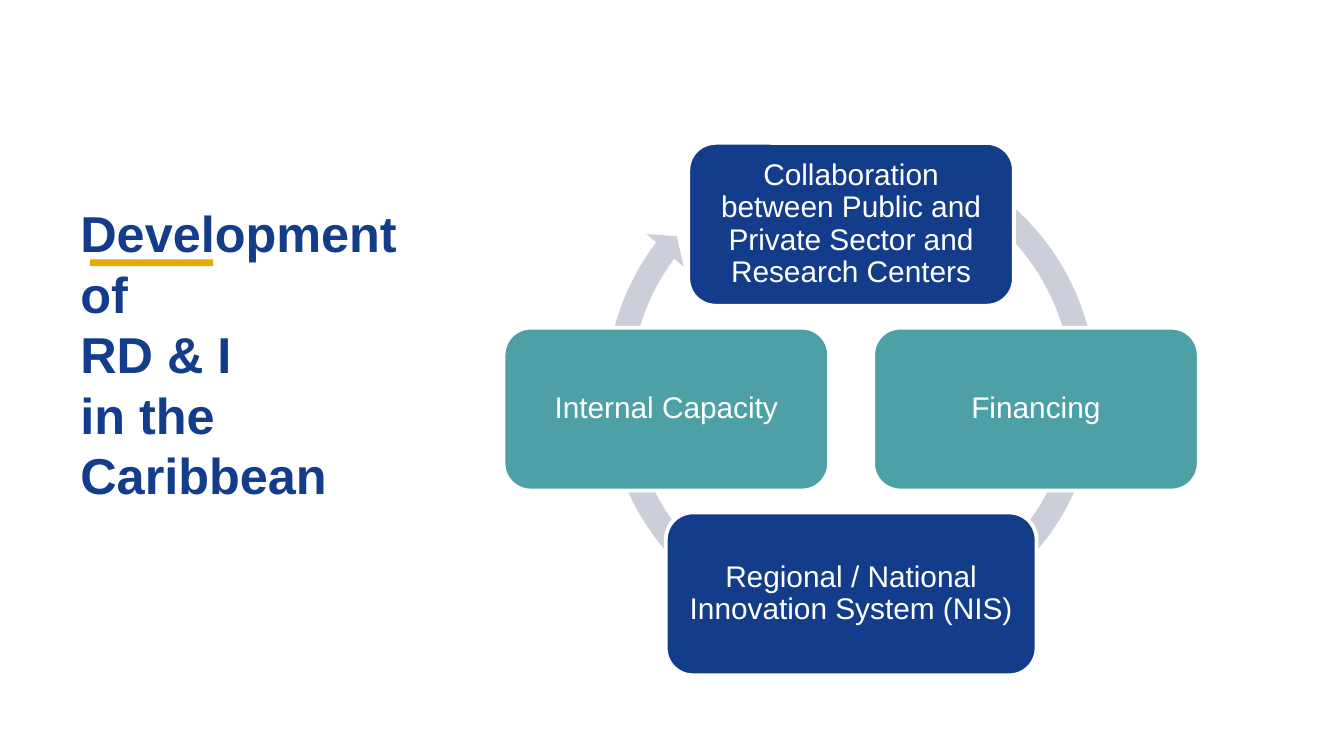
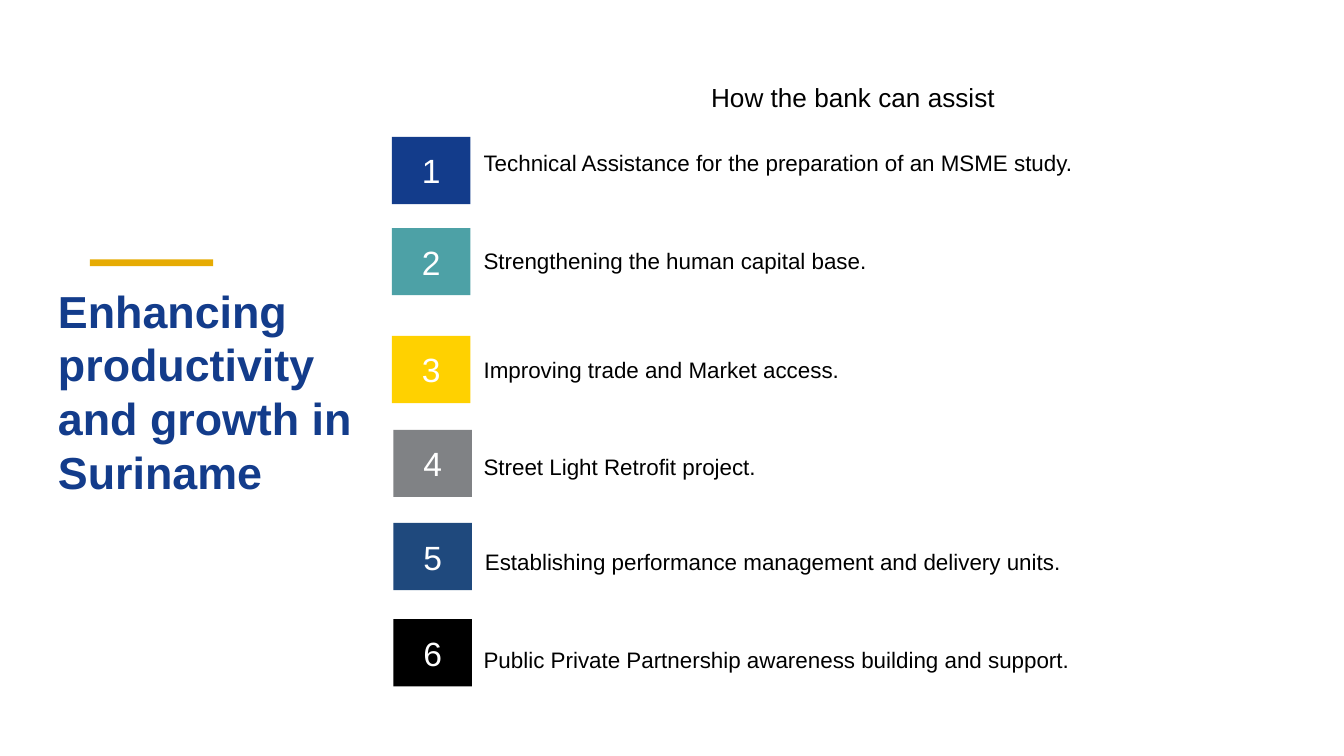
from dataclasses import dataclass

from pptx import Presentation
from pptx.dml.color import RGBColor
from pptx.enum.shapes import MSO_SHAPE
from pptx.enum.text import MSO_ANCHOR, PP_ALIGN
from pptx.util import Pt

RECTANGLE = MSO_SHAPE.RECTANGLE
ROUNDED = MSO_SHAPE.ROUNDED_RECTANGLE
CIRCULAR_ARROW = MSO_SHAPE.CIRCULAR_ARROW
TOP, MIDDLE = MSO_ANCHOR.TOP, MSO_ANCHOR.MIDDLE
LEFT, CENTER, JUSTIFY = PP_ALIGN.LEFT, PP_ALIGN.CENTER, PP_ALIGN.JUSTIFY


@dataclass(frozen=True)
class Theme:
    font: str = "Arial"
    navy: str = "133C8B"
    teal: str = "4DA1A6"
    gold: str = "E6AB03"
    yellow: str = "FFD100"
    gray: str = "808285"
    blue: str = "1F497D"
    black: str = "000000"
    white: str = "FFFFFF"
    ring: str = "CCCEDA"
    large_title: int = 27
    title: int = 24
    number: int = 18
    node: int = 16
    heading: int = 14
    label: int = 12


def write_text(frame, text, *, font, size, color, bold=False, align=LEFT,
               anchor=TOP, spacing=None, insets=(7.2, 3.6)):
    frame.word_wrap = True
    frame.vertical_anchor = anchor
    frame.margin_left = frame.margin_right = Pt(insets[0])
    frame.margin_top = frame.margin_bottom = Pt(insets[1])
    para = frame.paragraphs[0]
    para.text = text
    para.alignment = align
    para.line_spacing = spacing
    for span in para.runs:
        span.font.name = font
        span.font.size = Pt(size)
        span.font.bold = bold
        span.font.color.rgb = RGBColor.from_string(color)


class Painter:
    def __init__(self, deck, theme):
        self.deck = deck
        self.theme = theme
        self.page = None

    def new_page(self):
        self.page = self.deck.slides.add_slide(self.deck.slide_layouts[6])
        self.shape(RECTANGLE, 48.2, 139, 66, 3.6, self.theme.gold)

    def shape(self, kind, left, top, width, height, fill, line=None):
        shape = self.page.shapes.add_shape(
            kind, Pt(left), Pt(top), Pt(width), Pt(height))
        shape.shadow.inherit = False
        shape.fill.solid()
        shape.fill.fore_color.rgb = RGBColor.from_string(fill)
        if line:
            shape.line.color.rgb = RGBColor.from_string(line)
            shape.line.width = Pt(2)
        else:
            shape.line.fill.background()
        return shape

    def text(self, text, left, top, width, height, size, color=None, **style):
        box = self.page.shapes.add_textbox(
            Pt(left), Pt(top), Pt(width), Pt(height))
        write_text(box.text_frame, text, font=self.theme.font, size=size,
                   color=color or self.theme.black, **style)

    def title(self, text, left, top, width, size):
        self.text(text, left, top, width, 216, size, self.theme.navy,
                  bold=True, spacing=Pt(1.2 * size))

    def cycle_arrow(self, left, top, side):
        arrow = self.shape(CIRCULAR_ARROW, left, top, side, side,
                           self.theme.ring)
        for index, value in enumerate((0.047, 2.729, 130.2, 179.036, 0.048)):
            arrow.adjustments[index] = value

    def node(self, text, center, top, width, fill):
        shape = self.shape(ROUNDED, center - width / 2, top, width, 87.2, fill,
                           self.theme.white)
        write_text(shape.text_frame, text, font=self.theme.font,
                   size=self.theme.node, color=self.theme.white,
                   align=CENTER, anchor=MIDDLE, spacing=0.9, insets=(5, 5))

    def number(self, value, left, top, fill):
        shape = self.shape(RECTANGLE, left, top, 42, 36, fill)
        write_text(shape.text_frame, str(value), font=self.theme.font,
                   size=self.theme.number, color=self.theme.white,
                   align=CENTER, anchor=MIDDLE)


def build_cycle(painter):
    theme = painter.theme
    painter.new_page()
    painter.title("Development of\vRD & I\vin the Caribbean", 36, 105, 186,
                  theme.large_title)
    painter.cycle_arrow(318, 71.3, 276)
    center, offset, first, step = 456, 99, 76.6, 99
    nodes = (
        ("Collaboration between Public and Private Sector and Research Centers",
         0, 0, 174.4, theme.navy),
        ("Financing", 1, 1, 174.4, theme.teal),
        ("Regional / National Innovation System (NIS)",
         0, 2, 198.6, theme.navy),
        ("Internal Capacity", -1, 1, 174.4, theme.teal),
    )
    for text, column, row, width, fill in nodes:
        painter.node(text, center + column * offset, first + row * step,
                     width, fill)


def build_assistance(painter):
    theme = painter.theme
    painter.new_page()
    painter.title("Enhancing productivity and growth in Suriname", 24, 148.3,
                  180, theme.title)
    painter.text("How the bank can assist", 229, 31.7, 456, 30,
                 theme.heading, align=CENTER, spacing=1.5)
    items = (
        ("Technical Assistance for the preparation of an MSME study.",
         theme.navy, 73.4, 76.3, LEFT, None),
        ("Strengthening the human capital base.",
         theme.teal, 122.2, 128.9, JUSTIFY, None),
        ("Improving trade and Market access.",
         theme.yellow, 180, 187.2, LEFT, None),
        ("Street Light Retrofit project.",
         theme.gray, 230.3, 239.2, LEFT, None),
        ("Establishing performance management and delivery units.",
         theme.blue, 280.2, 290.2, LEFT, None),
        ("Public Private Partnership awareness building and support.",
         theme.black, 331.7, 335.5, JUSTIFY, 1.5),
    )
    for value, item in enumerate(items, start=1):
        text, fill, number_top, label_top, align, spacing = item
        painter.number(value, 210 if value < 4 else 210.8, number_top, fill)
        painter.text(text, 252.7 if value == 5 else 252, label_top, 438,
                     28.8 if spacing else 21.6, theme.label,
                     align=align, spacing=spacing)


def main():
    deck = Presentation()
    deck.slide_width, deck.slide_height = Pt(720), Pt(405)
    painter = Painter(deck, Theme())
    build_cycle(painter)
    build_assistance(painter)
    deck.save("out.pptx")


if __name__ == "__main__":
    main()
